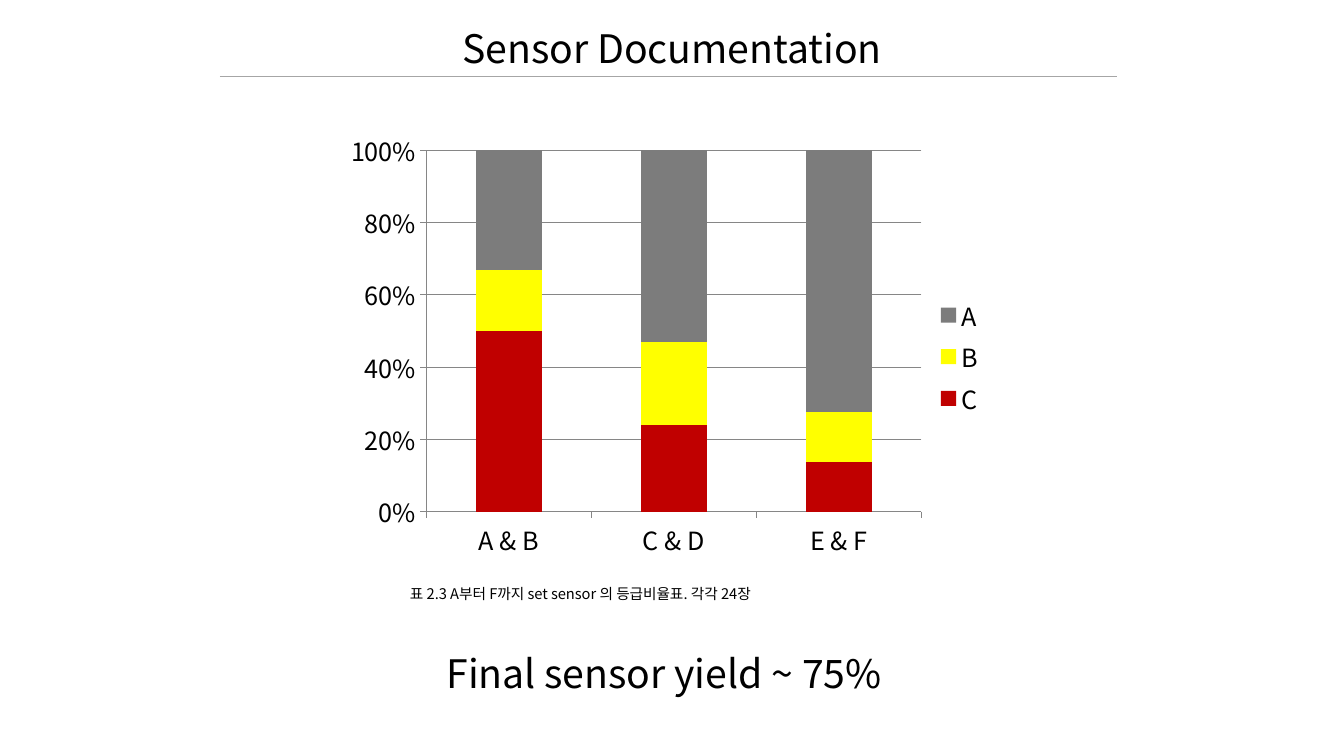
from lxml.etree import SubElement
from pptx import Presentation
from pptx.chart.data import CategoryChartData
from pptx.dml.color import RGBColor
from pptx.enum.chart import XL_CHART_TYPE, XL_LEGEND_POSITION, XL_TICK_MARK
from pptx.enum.shapes import MSO_CONNECTOR
from pptx.enum.text import MSO_ANCHOR, MSO_AUTO_SIZE, PP_ALIGN
from pptx.oxml.ns import qn
from pptx.util import Pt

FONT = "Noto Sans CJK KR"
BLACK = RGBColor(0x00, 0x00, 0x00)
RULE_GRAY = RGBColor(0xA6, 0xA6, 0xA6)
AXIS_GRAY = RGBColor(0x86, 0x86, 0x86)
GRADES = {
    "C": ((50, 24, 14), RGBColor(0xC0, 0x00, 0x00)),
    "B": ((17, 23, 14), RGBColor(0xFF, 0xFF, 0x00)),
    "A": ((33, 53, 73), RGBColor(0x7C, 0x7C, 0x7C)),
}
SENSOR_SETS = ("A & B", "C & D", "E & F")
PLOT_LAYOUT = {"x": 0.154, "y": 0.037, "w": 0.737, "h": 0.811}


def add_text(slide, text, box, size, align=PP_ALIGN.LEFT, anchor=MSO_ANCHOR.TOP,
             wrap=True, grow=True, line_spacing=None):
    """Add one paragraph of text in a box given in points."""
    frame = slide.shapes.add_textbox(*map(Pt, box)).text_frame
    frame.text = text
    frame.word_wrap = wrap
    frame.vertical_anchor = anchor
    frame.auto_size = MSO_AUTO_SIZE.SHAPE_TO_FIT_TEXT if grow else MSO_AUTO_SIZE.NONE
    paragraph = frame.paragraphs[0]
    paragraph.alignment = align
    paragraph.line_spacing = line_spacing
    font = paragraph.runs[0].font
    font.size, font.name, font.color.rgb = Pt(size), FONT, BLACK
    properties = paragraph.runs[0].font._element
    SubElement(properties, qn("a:ea"), typeface=FONT)


def add_rule(slide, left, right, top):
    """Add a thin horizontal rule."""
    rule = slide.shapes.add_connector(
        MSO_CONNECTOR.STRAIGHT, Pt(left), Pt(top), Pt(right), Pt(top))
    rule.line.color.rgb = RULE_GRAY
    rule.line.width = Pt(1.25)
    SubElement(rule._element.spPr, qn("a:effectLst"))


def place_plot(chart):
    """Fix the inner plot area as fractions of the chart."""
    plot_area = chart.element.find(f".//{qn('c:plotArea')}")
    for layout in plot_area.findall(qn("c:layout")):
        plot_area.remove(layout)
    layout = SubElement(plot_area, qn("c:layout"))
    plot_area.insert(0, layout)
    manual = SubElement(layout, qn("c:manualLayout"))
    SubElement(manual, qn("c:layoutTarget"), val="inner")
    for side in "xy":
        SubElement(manual, qn(f"c:{side}Mode"), val="edge")
    for side, fraction in PLOT_LAYOUT.items():
        SubElement(manual, qn(f"c:{side}"), val=str(fraction))


def style_line(line):
    """Give an axis or gridline its thin gray stroke."""
    line.color.rgb = AXIS_GRAY
    line.width = Pt(0.75)


def add_grade_chart(slide, box):
    """Add the stacked chart of sensor grades."""
    data = CategoryChartData()
    data.categories = SENSOR_SETS
    for grade, (shares, _) in GRADES.items():
        data.add_series(grade, shares)
    chart = slide.shapes.add_chart(
        XL_CHART_TYPE.COLUMN_STACKED_100, *map(Pt, box), data).chart
    chart.has_title = False
    chart.font.size, chart.font.name, chart.font.color.rgb = Pt(18), FONT, BLACK
    chart.has_legend = True
    chart.legend.position = XL_LEGEND_POSITION.RIGHT
    chart.legend.include_in_layout = False

    plot = chart.plots[0]
    plot.gap_width, plot.overlap, plot.vary_by_categories = 150, 100, False
    for series, (_, color) in zip(plot.series, GRADES.values()):
        series.format.fill.solid()
        series.format.fill.fore_color.rgb = color

    for axis in (chart.category_axis, chart.value_axis):
        axis.major_tick_mark = XL_TICK_MARK.OUTSIDE
        axis.minor_tick_mark = XL_TICK_MARK.NONE
        style_line(axis.format.line)
    value_axis = chart.value_axis
    value_axis.has_major_gridlines = True
    style_line(value_axis.major_gridlines.format.line)
    value_axis.tick_labels.number_format = "0%"
    value_axis.tick_labels.number_format_is_linked = False
    place_plot(chart)


def main():
    """Build and save the sensor slide."""
    presentation = Presentation()
    presentation.slide_width, presentation.slide_height = Pt(960), Pt(540)
    slide = presentation.slides.add_slide(presentation.slide_layouts[6])
    add_text(slide, "Sensor Documentation", (120, 0, 720, 54.7), 28,
             PP_ALIGN.CENTER, MSO_ANCHOR.BOTTOM, grow=False, line_spacing=0.9)
    add_rule(slide, 157, 798, 54.7)
    add_grade_chart(slide, (230.4, 94.3, 480.2, 319.7))
    add_text(slide, "표 2.3 A부터 F까지 set sensor 의 등급비율표. 각각 24장",
             (285.8, 414, 429.8, 20.2), 10.5)
    add_text(slide, "Final sensor yield ~ 75%", (311.8, 460, 331.2, 41), 28, wrap=False)
    presentation.save("out.pptx")


if __name__ == "__main__":
    main()
